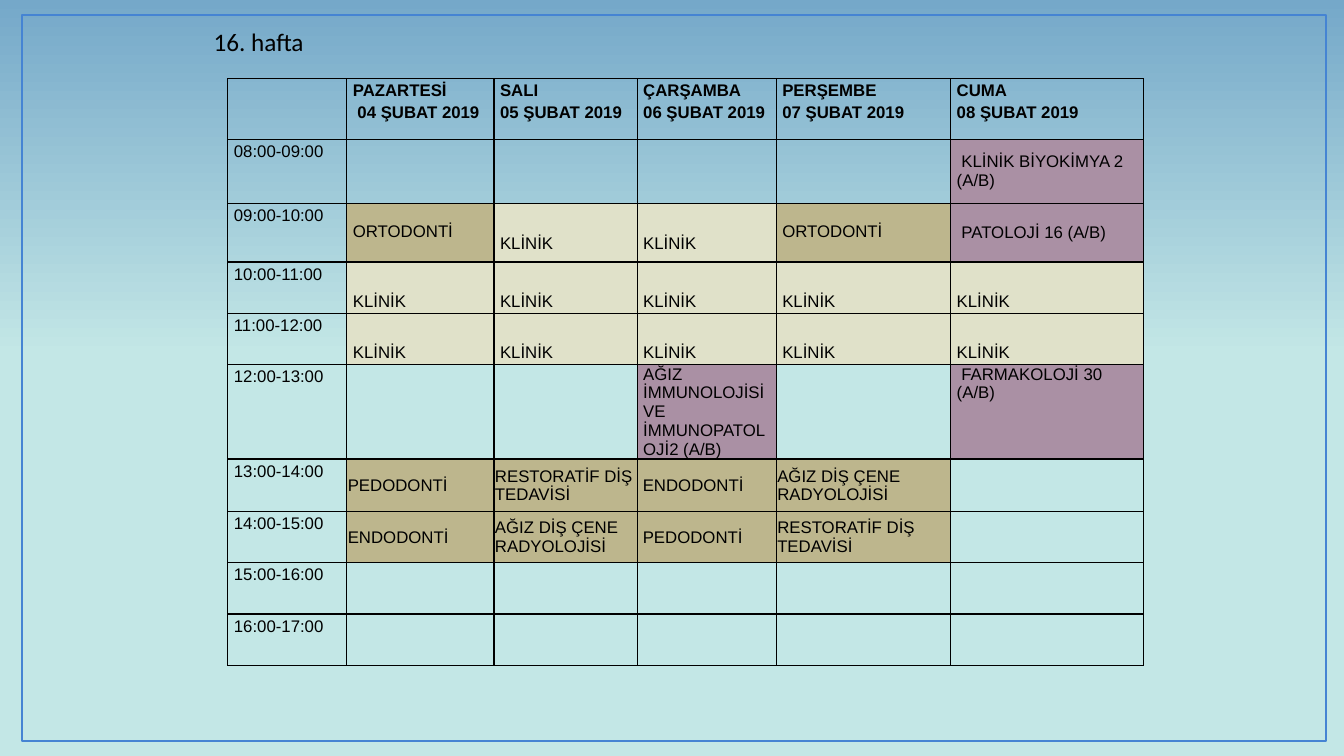
from lxml import etree
from pptx import Presentation
from pptx.dml.color import RGBColor
from pptx.enum.shapes import MSO_SHAPE
from pptx.enum.text import MSO_ANCHOR
from pptx.oxml.ns import qn
from pptx.util import Inches, Pt

RECT = MSO_SHAPE.RECTANGLE
TOP, MIDDLE = MSO_ANCHOR.TOP, MSO_ANCHOR.MIDDLE

BLACK, BLUE = "000000", "4584D3"
SKY, MINT = "75A8C9", "C3E7E6"
MAUVE, KHAKI, CREAM = "AA90A4", "BDB68D", "E0E1C9"

# Cell kinds: fill, anchor, side inset, top inset, line spacing, bold
KINDS = {
    "head": (None, TOP, 0.06, 0, 1.15, True),
    "time": (None, TOP, 0.06, 0, 1.15, False),
    "free": (None, TOP, 0.06, 0, 1, False),
    "talk": (MAUVE, MIDDLE, 0.06, 0, 1, False),
    "noon": (MAUVE, TOP, 0.06, 0, 1, False),
    "ortho": (KHAKI, TOP, 0.06, 0.19, 1, False),
    "clinic": (CREAM, TOP, 0.06, 0.3, 1, False),
    "class": (KHAKI, MIDDLE, 0.01, 0.01, 1, False),
}

WIDTHS = [1.18, 1.46, 1.42, 1.38, 1.73, 1.91]
HEIGHTS = [0.6, 0.64, 0.58, 0.51, 0.51, 0.93, 0.52, 0.51, 0.51, 0.51]

DAYS = ["PAZARTESİ\n 04 ŞUBAT 2019", "SALI\n05 ŞUBAT 2019",
        "ÇARŞAMBA\n06 ŞUBAT 2019", "PERŞEMBE\n07 ŞUBAT 2019",
        "CUMA\n08 ŞUBAT 2019"]

FREE = ("free", "")
CLINIC = ("clinic", "KLİNİK")
ORTHO = ("ortho", "ORTODONTİ")
RESTO = ("class", "RESTORATİF DİŞ TEDAVİSİ")
RADIO = ("class", "AĞIZ DİŞ ÇENE RADYOLOJİSİ")

# One row of five days for each hour from 08:00
HOURS = [
    [FREE] * 4 + [("talk", " KLİNİK BİYOKİMYA 2 (A/B)")],
    [ORTHO, CLINIC, CLINIC, ORTHO, ("talk", " PATOLOJİ 16 (A/B)")],
    [CLINIC] * 5,
    [CLINIC] * 5,
    [FREE, FREE, ("noon", "AĞIZ İMMUNOLOJİSİ VE İMMUNOPATOLOJİ2 (A/B)"),
     FREE, ("noon", " FARMAKOLOJİ 30 (A/B)")],
    [("class", "PEDODONTİ"), RESTO, ("class", " ENDODONTİ"), RADIO, FREE],
    [("class", "ENDODONTİ"), RADIO, ("class", " PEDODONTİ"), RESTO, FREE],
    [FREE] * 5,
    [FREE] * 5,
]


def color(code):
    return RGBColor.from_string(code)


def style(para, font, size, bold=False):
    for run in para.runs:
        run.font.name = font
        run.font.size = Pt(size)
        run.font.bold = bold
        run.font.color.rgb = color(BLACK)


def paint_back(slide):
    fill = slide.background.fill
    fill.gradient()
    fill.gradient_angle = 90
    for stop, spot, code in zip(fill.gradient_stops, (0.53, 1), (MINT, SKY)):
        stop.position = spot
        stop.color.rgb = color(code)


def add_frame(slide):
    frame = slide.shapes.add_shape(
        RECT, Inches(0.22), Inches(0.15), Inches(12.93), Inches(7.2))
    frame.shadow.inherit = False
    frame.fill.background()
    frame.line.color.rgb = color(BLUE)
    frame.line.width = Pt(1.5)


def add_title(slide, text):
    box = slide.shapes.add_textbox(
        Inches(2.02), Inches(0.21), Inches(1.11), Inches(0.4))
    box.text_frame.word_wrap = False
    box.text_frame.text = text
    style(box.text_frame.paragraphs[0], "Calibri", 18)


def add_edges(cell):
    props = cell._tc.get_or_add_tcPr()
    for i, side in enumerate(("a:lnL", "a:lnR", "a:lnT", "a:lnB")):
        line = etree.Element(qn(side), w=str(Pt(1)))
        fill = etree.SubElement(line, qn("a:solidFill"))
        etree.SubElement(fill, qn("a:srgbClr"), val=BLACK)
        props.insert(i, line)


def fill_cell(cell, kind, text):
    code, anchor, side, top, space, bold = KINDS[kind]
    if code:
        cell.fill.solid()
        cell.fill.fore_color.rgb = color(code)
    else:
        cell.fill.background()
    cell.vertical_anchor = anchor
    cell.margin_left = cell.margin_right = Inches(side)
    cell.margin_top, cell.margin_bottom = Inches(top), 0
    cell.text_frame.text = text
    for para in cell.text_frame.paragraphs:
        para.line_spacing = space
        style(para, "Arial", 12, bold)
    add_edges(cell)


def add_plan(slide, rows):
    table = slide.shapes.add_table(
        len(HEIGHTS), len(WIDTHS), Inches(2.26), Inches(0.78),
        Inches(sum(WIDTHS)), Inches(sum(HEIGHTS))).table
    table.first_row = table.horz_banding = False
    for col, width in zip(table.columns, WIDTHS):
        col.width = Inches(width)
    for row, height, items in zip(table.rows, HEIGHTS, rows):
        row.height = Inches(height)
        for cell, (kind, text) in zip(row.cells, items):
            fill_cell(cell, kind, text)


def main():
    deck = Presentation()
    deck.slide_width, deck.slide_height = Inches(13.33), Inches(7.5)
    slide = deck.slides.add_slide(deck.slide_layouts[6])

    # Backdrop
    paint_back(slide)
    add_frame(slide)

    # Week plan
    rows = [[FREE] + [("head", day) for day in DAYS]]
    for hour, items in enumerate(HOURS, 8):
        rows.append([("time", f"{hour:02}:00-{hour + 1:02}:00")] + items)
    add_plan(slide, rows)
    add_title(slide, "16. hafta")

    deck.save("out.pptx")


if __name__ == "__main__":
    main()
